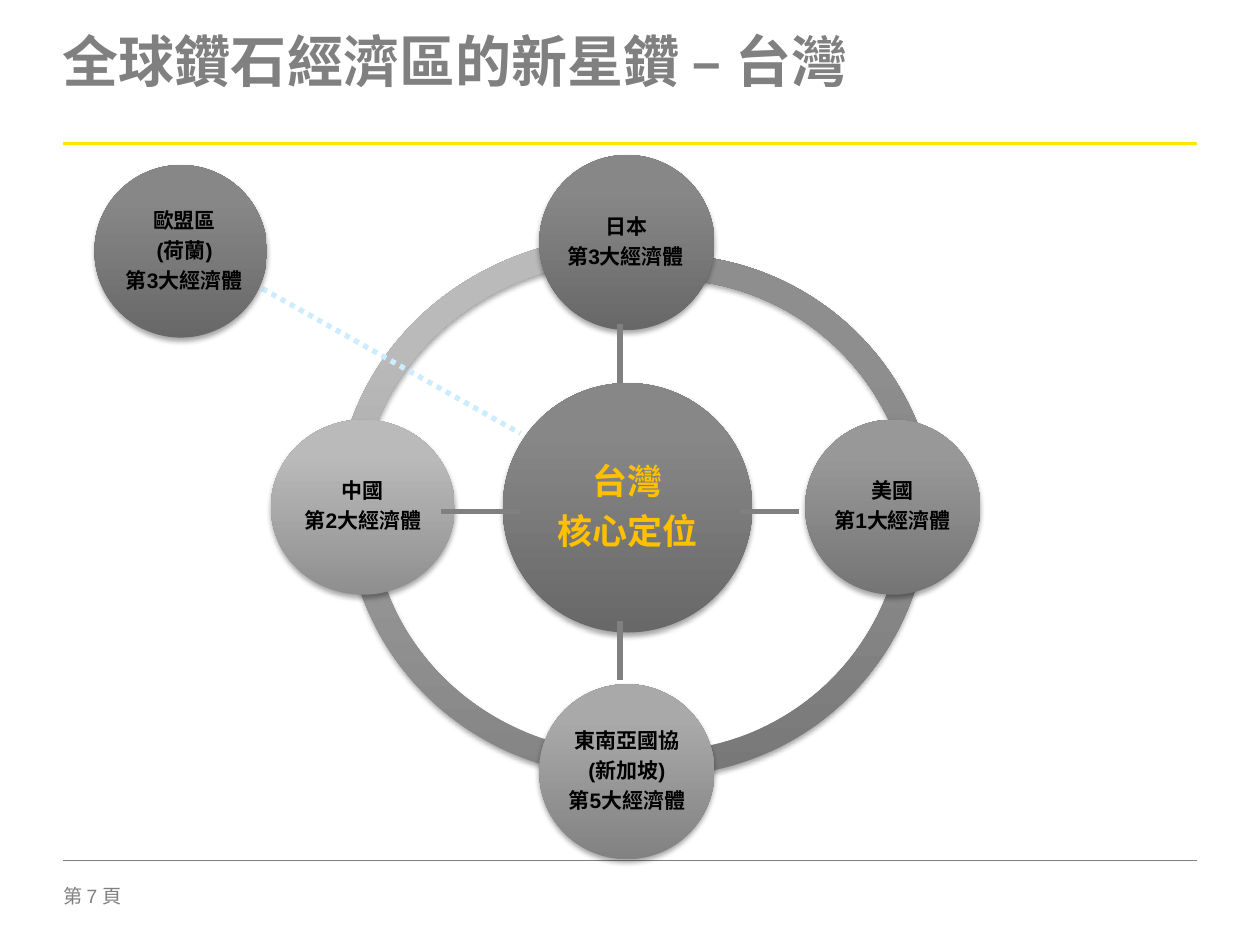
from lxml import etree
from pptx import Presentation
from pptx.dml.color import RGBColor
from pptx.enum.dml import MSO_LINE
from pptx.enum.shapes import MSO_CONNECTOR, MSO_SHAPE
from pptx.enum.text import MSO_ANCHOR, PP_ALIGN
from pptx.oxml.ns import qn
from pptx.util import Inches, Pt

LATIN_FONT = "Arial"
CJK_FONT = "Noto Sans CJK SC"

BLACK = RGBColor(0x00, 0x00, 0x00)
GRAY = RGBColor(0x80, 0x80, 0x80)
YELLOW = RGBColor(0xFF, 0xE6, 0x00)
GOLD = RGBColor(0xFF, 0xC0, 0x00)
PALE_BLUE = RGBColor(0xCC, 0xEC, 0xFF)

# Gradient pairs: bottom colour, top colour
CORE_SHADE = RGBColor(0x68, 0x68, 0x68), RGBColor(0x87, 0x87, 0x87)
USA_SHADE = RGBColor(0x75, 0x75, 0x75), RGBColor(0x98, 0x98, 0x98)
ASEAN_SHADE = RGBColor(0x82, 0x82, 0x82), RGBColor(0xA9, 0xA9, 0xA9)
CHINA_SHADE = RGBColor(0x8F, 0x8F, 0x8F), RGBColor(0xBA, 0xBA, 0xBA)
ARC_SHADES = [
    CHINA_SHADE,
    (RGBColor(0x84, 0x84, 0x84), RGBColor(0xAB, 0xAB, 0xAB)),
    (RGBColor(0x78, 0x78, 0x78), RGBColor(0x9C, 0x9C, 0x9C)),
    (RGBColor(0x6D, 0x6D, 0x6D), RGBColor(0x8E, 0x8E, 0x8E)),
]

# Left, top, width, height, start and end adjustment of each ring quarter
ARCS = [
    (2.67, 1.87, 4.61, 4.3, 108, 162),
    (2.75, 1.87, 4.46, 4.3, 54, 108),
    (3.07, 1.86, 4.3, 4.3, 0, 54),
    (3.14, 2.02, 4.3, 4.3, 162, 0),
]
RING_THICKNESS = 0.046
INSCRIBED = 0.146  # margin of the square inside a circle, as a share of its size

SPOKES = [
    (4.92, 2.57, 4.92, 3.04),
    (3.5, 4.06, 4.13, 4.06),
    (5.87, 4.06, 6.34, 4.06),
    (4.92, 4.93, 4.92, 5.4),
]


def add_text(slide, box, paragraphs, size, color, bold=True, align=PP_ALIGN.CENTER,
             anchor=MSO_ANCHOR.MIDDLE, inset=0.0, line_spacing=0.9, gap=0.35):
    """Each paragraph is a list of runs; gap is a share of the text size."""
    frame = slide.shapes.add_textbox(*map(Inches, box)).text_frame
    frame.word_wrap = True
    frame.vertical_anchor = anchor
    frame.margin_left = frame.margin_right = Inches(inset)
    frame.margin_top = frame.margin_bottom = Inches(inset)
    for index, runs in enumerate(paragraphs):
        paragraph = frame.add_paragraph() if index else frame.paragraphs[0]
        paragraph.alignment = align
        paragraph.line_spacing = line_spacing
        paragraph.space_after = Pt(size * gap)
        for words in runs:
            run = paragraph.add_run()
            run.text = words
            font = run.font
            font.size, font.bold, font.name = Pt(size), bold, LATIN_FONT
            font.color.rgb = color
            east_asian = etree.Element(qn("a:ea"), typeface=CJK_FONT)
            font._element.find(qn("a:latin")).addnext(east_asian)


def add_line(slide, ends, color, width, dash=None):
    connector = slide.shapes.add_connector(MSO_CONNECTOR.STRAIGHT, *map(Inches, ends))
    connector.line.color.rgb = color
    connector.line.width = Pt(width)
    if dash:
        connector.line.dash_style = dash
    etree.SubElement(connector._element.spPr, qn("a:effectLst"))


def add_shaded_shape(slide, kind, box, shade):
    """Preset shape with a vertical gradient and a soft shadow below."""
    shape = slide.shapes.add_shape(kind, *map(Inches, box))
    shape.fill.gradient()
    shape.fill.gradient_angle = 90
    for stop, color, position in zip(shape.fill.gradient_stops, shade, (0, 0.8)):
        stop.color.rgb = color
        stop.position = position
    shape.line.fill.background()
    shape.shadow.inherit = False
    effects = shape._element.spPr.find(qn("a:effectLst"))
    shadow = etree.SubElement(effects, qn("a:outerShdw"), blurRad=str(Pt(3.1)),
                              dist=str(Pt(1.8)), dir="5400000", rotWithShape="0")
    black = etree.SubElement(shadow, qn("a:srgbClr"), val=str(BLACK))
    etree.SubElement(black, qn("a:alpha"), val="35000")
    return shape


def add_ring(slide):
    for (*box, start, end), shade in zip(ARCS, ARC_SHADES):
        arc = add_shaded_shape(slide, MSO_SHAPE.BLOCK_ARC, box, shade)
        for index, value in enumerate((start, end, RING_THICKNESS)):
            arc.adjustments[index] = value


def add_circle(slide, box, shade, paragraphs, size=12, color=BLACK, inset=0.02, shift=0.0):
    """Circle with its label in the inscribed square, moved right by shift."""
    add_shaded_shape(slide, MSO_SHAPE.OVAL, box, shade)
    left, top, width, height = box
    label = (left + width * INSCRIBED + shift, top + height * INSCRIBED,
             width * (1 - 2 * INSCRIBED), height * (1 - 2 * INSCRIBED))
    add_text(slide, label, paragraphs, size, color, inset=inset)


def economy(names, rank, ending=""):
    return [[name] for name in names] + [["第", str(rank), "大經濟體" + ending]]


def main():
    prs = Presentation()
    prs.slide_width, prs.slide_height = Inches(10), Inches(7.5)
    slide = prs.slides.add_slide(prs.slide_layouts[6])

    plain = {"align": PP_ALIGN.LEFT, "anchor": MSO_ANCHOR.TOP, "gap": 0}
    add_text(slide, (0.5, 7.02, 0.79, 0.22), [["第 ", "7 ", "頁"]], 11, GRAY,
             bold=False, line_spacing=1.0, **plain)
    add_line(slide, (0.5, 1.14, 9.5, 1.14), YELLOW, 1.5)
    add_line(slide, (0.5, 6.83, 9.5, 6.83), GRAY, 0.25)
    add_text(slide, (0.5, 0.29, 9, 0.79), [["全球鑽石經濟區的新星鑽 – 台灣"]], 32, GRAY,
             line_spacing=0.85, **plain)

    add_ring(slide)
    add_circle(slide, (3.99, 3.04, 1.98, 1.98), CORE_SHADE, [["台灣"], ["核心定位"]],
               size=20, color=GOLD, inset=0.03)
    add_circle(slide, (4.28, 1.23, 1.39, 1.39), CORE_SHADE, economy(["日本"], 3, "\t"))
    add_circle(slide, (6.39, 3.33, 1.39, 1.39), USA_SHADE, economy(["美國"], 1))
    add_circle(slide, (4.28, 5.43, 1.39, 1.39), ASEAN_SHADE,
               economy(["東南亞國協", "(新加坡)"], 5))
    add_circle(slide, (2.15, 3.33, 1.46, 1.39), CHINA_SHADE, economy(["中國"], 2))

    add_line(slide, (2.01, 2.25, 4.13, 3.44), PALE_BLUE, 3, MSO_LINE.ROUND_DOT)
    for ends in SPOKES:
        add_line(slide, ends, GRAY, 3)
    add_circle(slide, (0.75, 1.31, 1.37, 1.37), CORE_SHADE,
               economy(["歐盟區", "(荷蘭)"], 3, "\t"), shift=0.03)

    prs.save("out.pptx")


if __name__ == "__main__":
    main()
